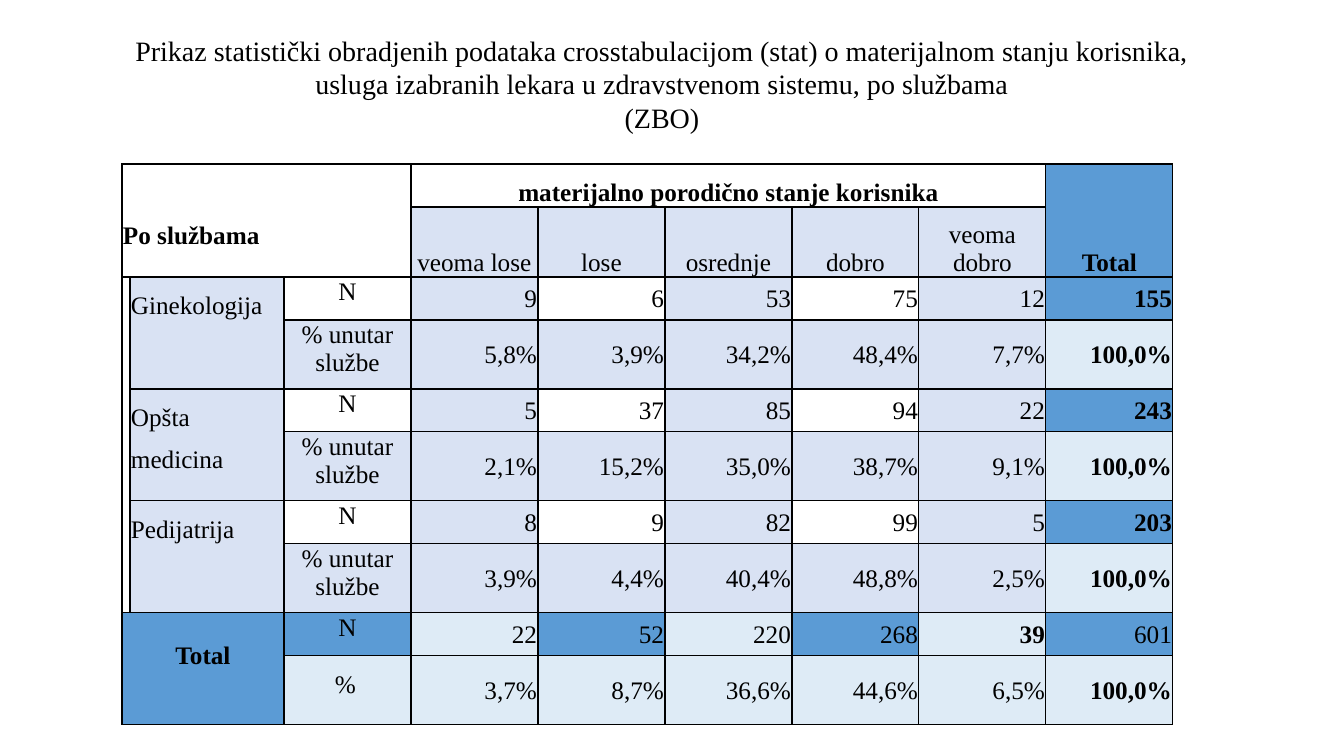
from pptx import Presentation
from pptx.dml.color import RGBColor
from pptx.enum.text import MSO_ANCHOR as ANCHOR, MSO_AUTO_SIZE as AUTO, PP_ALIGN as ALIGN
from pptx.oxml import parse_xml
from pptx.oxml.ns import nsdecls
from pptx.util import Pt

SCALE = 914400 / 100.8
BLUE, TINT, BLACK = "5B9BD5", "4472C4", "000000"


def px(n):
    return round(n * SCALE)


def paint(color, value):
    color.rgb = RGBColor.from_string(value)


prs = Presentation()
prs.slide_width, prs.slide_height = px(1344), px(756)
s = prs.slides.add_slide(prs.slide_layouts[5])

title = s.shapes.title
title.left, title.top, title.width, title.height = px(25), px(28), px(1274), px(112)
tf = title.text_frame
tf.text = (
    "Prikaz statistički obradjenih podataka crosstabulacijom (stat) o materijalnom stanju korisnika,\n"
    "usluga izabranih lekara u zdravstvenom sistemu, po službama\n"
    "(ZBO)"
)
tf.word_wrap = True
tf.auto_size = AUTO.SHAPE_TO_FIT_TEXT
tf.vertical_anchor = ANCHOR.TOP
for p in tf.paragraphs:
    p.alignment = ALIGN.CENTER
    for r in p.runs:
        r.font.name, r.font.size = "Times New Roman", Pt(20)
        paint(r.font.color, BLACK)

rows = [
    ["Po službama", "", "", "materijalno porodično stanje korisnika", "", "", "", "", "Total"],
    ["", "", "", "veoma lose", "lose", "osrednje", "dobro", "veoma dobro", ""],
    ["", "Ginekologija", "N", "9", "6", "53", "75", "12", "155"],
    ["", "", "% unutar službe", "5,8%", "3,9%", "34,2%", "48,4%", "7,7%", "100,0%"],
    ["", "Opšta medicina", "N", "5", "37", "85", "94", "22", "243"],
    ["", "", "% unutar službe", "2,1%", "15,2%", "35,0%", "38,7%", "9,1%", "100,0%"],
    ["", "Pedijatrija", "N", "8", "9", "82", "99", "5", "203"],
    ["", "", "% unutar službe", "3,9%", "4,4%", "40,4%", "48,8%", "2,5%", "100,0%"],
    ["Total", "", "N", "22", "52", "220", "268", "39", "601"],
    ["", "", "%", "3,7%", "8,7%", "36,6%", "44,6%", "6,5%", "100,0%"],
]
widths = [8, 154] + [127] * 7
heights = [43, 70] + [43, 69] * 4
merges = [
    (0, 0, 1, 2), (0, 3, 0, 7), (0, 8, 1, 8), (2, 0, 7, 0),
    (2, 1, 3, 1), (4, 1, 5, 1), (6, 1, 7, 1), (8, 0, 9, 1),
]
bold_cells = {(0, 0), (0, 3), (8, 0), (8, 7)}
line_spacing = {(2, 1): 1.5, (4, 1): 1.5, (6, 1): 1.5, (8, 0): 2.0, (9, 2): 1.5}

table = s.shapes.add_table(
    len(rows), len(widths), px(122), px(164), px(sum(widths)), px(sum(heights))
).table
table.first_row = table.horz_banding = False
for column, width in zip(table.columns, widths):
    column.width = px(width)
for row, height in zip(table.rows, heights):
    row.height = px(height)

for i, texts in enumerate(rows):
    for j, text in enumerate(texts):
        cell = table.cell(i, j)
        cell.margin_left = cell.margin_right = cell.margin_top = px(1)
        cell.margin_bottom = px(27) if (i, j) == (0, 0) else 0
        cell.vertical_anchor = ANCHOR.BOTTOM if i < 2 else ANCHOR.TOP if j < 3 else ANCHOR.MIDDLE

        tcPr = cell._tc.get_or_add_tcPr()
        for side in "LRTB":
            tcPr.append(parse_xml(
                f'<a:ln{side} {nsdecls("a")} w="12700"><a:solidFill>'
                f'<a:srgbClr val="{BLACK}"/></a:solidFill></a:ln{side}>'
            ))

        is_total = i >= 8 or j == 8
        is_pale = i % 2 == 1 or (j % 2 == 1 and i > 0)
        if is_total or is_pale:
            cell.fill.solid()
            paint(cell.fill.fore_color, BLUE if is_total else TINT)
            if is_pale:
                tcPr[-1][0].append(parse_xml(f'<a:alpha {nsdecls("a")} val="20000"/>'))
        else:
            cell.fill.background()

        if not text:
            continue
        cell.text_frame.text = text
        p = cell.text_frame.paragraphs[0]
        if (i, j) in line_spacing:
            p.line_spacing = line_spacing[i, j]
        if (i, j) == (9, 2):
            p.level = 1
            p._p.get_or_add_pPr().set("marL", str(px(50)))
        elif (i, j) == (0, 0) or (j == 1 and i > 1):
            p.alignment = ALIGN.LEFT
        elif i < 2 or j < 3:
            p.alignment = ALIGN.CENTER
        else:
            p.alignment = ALIGN.RIGHT
        font = p.runs[0].font
        font.name, font.size = "Times New Roman", Pt(18)
        font.bold = (i, j) in bold_cells or (j == 8 and i != 8)
        paint(font.color, BLACK)

for top, left, bottom, right in merges:
    table.cell(top, left).merge(table.cell(bottom, right))

prs.save("out.pptx")
